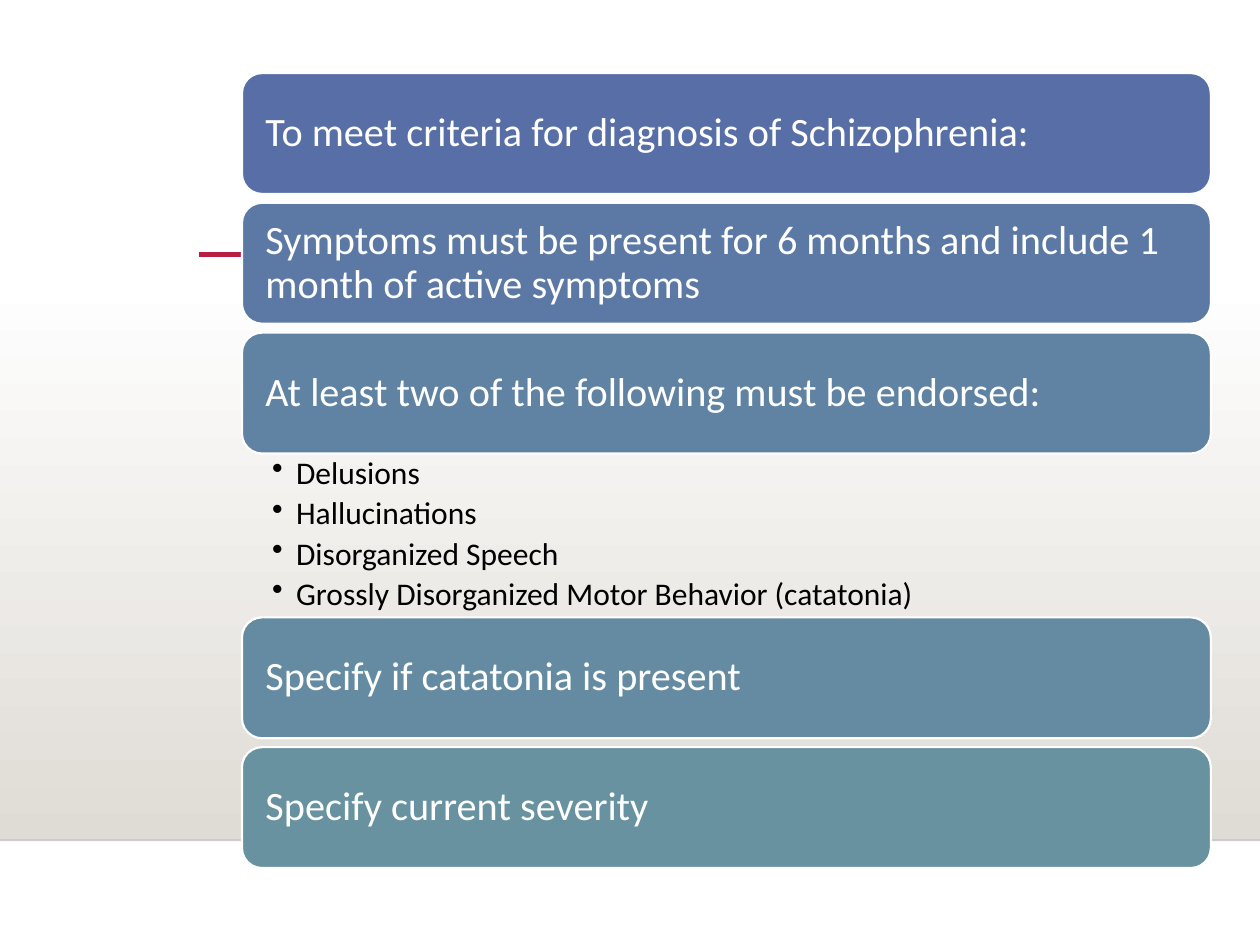
from lxml import etree
from pptx import Presentation
from pptx import util as u
from pptx.dml import color as col
from pptx.enum import shapes, text
from pptx.oxml import ns

HUES = {"white": "FFFFFF", "sand": "DFDBD5", "black": "000000", "red": "B71E42"}
FONT = "Calibri"
HIGH, GAP = 0.96, 0.07
HEADS = [
    ("To meet criteria for diagnosis of Schizophrenia:", "586EA6"),
    ("Symptoms must be present for 6 months and include 1 month of active symptoms", "5C79A5"),
    ("At least two of the following must be endorsed:", "6083A3"),
]
SIGNS = [
    "Delusions",
    "Hallucinations",
    "Disorganized Speech",
    "Grossly Disorganized Motor Behavior (catatonia)",
]
NOTES = [
    ("Specify if catatonia is present", "648BA2"),
    ("Specify current severity", "6892A0"),
]


def rgb(code):
    """Turn a hex string into a colour."""
    return col.RGBColor.from_string(code)


def inset(frame, left, top, right, low):
    """Set the four margins of a text frame and let it wrap."""
    frame.word_wrap = True
    frame.margin_left, frame.margin_top = u.Inches(left), u.Inches(top)
    frame.margin_right, frame.margin_bottom = u.Inches(right), u.Inches(low)


def style(para, size, hue):
    """Format a paragraph and its runs."""
    para.alignment = text.PP_ALIGN.LEFT
    para.line_spacing = 0.9
    for run in para.runs:
        run.font.name, run.font.size = FONT, u.Pt(size)
        run.font.color.rgb = rgb(hue)


def rule(slide, left, top, wide, hue, thick, alpha=None):
    """Draw a level line, see-through if alpha is given."""
    y = u.Inches(top)
    line = slide.shapes.add_connector(
        shapes.MSO_CONNECTOR.STRAIGHT, u.Inches(left), y, u.Inches(left + wide), y)
    line.line.color.rgb = rgb(hue)
    line.line.width = u.Pt(thick)
    props = line._element.spPr
    if alpha:
        tint = props.find(".//" + ns.qn("a:srgbClr"))
        etree.SubElement(tint, ns.qn("a:alpha")).set("val", str(alpha * 1000))
    etree.SubElement(props, ns.qn("a:effectLst"))


def floor(slide, left, top, wide, high):
    """Draw the fading backdrop with its edge and the accent line."""
    wall = slide.shapes.add_shape(
        shapes.MSO_SHAPE.RECTANGLE, *map(u.Inches, (left, top, wide, high)))
    wall.shadow.inherit = False
    wall.line.fill.background()
    wall.fill.gradient()
    wall.fill.gradient_angle = 270
    for stop, hue, spot in zip(wall.fill.gradient_stops, ("white", "sand"), (0, 1)):
        stop.color.rgb = rgb(HUES[hue])
        stop.position = spot
    rule(slide, left, top + high, wide, HUES["black"], 1, 20)
    rule(slide, 1.58, 2.02, 7.19, HUES["red"], 2.5)


def bar(slide, left, top, wide, words, hue):
    """Draw one rounded bar with its heading."""
    shape = slide.shapes.add_shape(
        shapes.MSO_SHAPE.ROUNDED_RECTANGLE, *map(u.Inches, (left, top, wide, HIGH)))
    shape.shadow.inherit = False
    shape.fill.solid()
    shape.fill.fore_color.rgb = rgb(hue)
    shape.line.color.rgb = rgb(HUES["white"])
    shape.line.width = u.Pt(1.25)
    frame = shape.text_frame
    inset(frame, 0.14, 0.1, 0.14, 0.1)
    frame.vertical_anchor = text.MSO_ANCHOR.MIDDLE
    frame.text = words
    style(frame.paragraphs[0], 23, HUES["white"])


def bullets(slide, left, top, wide, high, items):
    """Place the bulleted list."""
    box = slide.shapes.add_textbox(*map(u.Inches, (left, top, wide, high)))
    frame = box.text_frame
    inset(frame, 0.24, 0.03, 0.18, 0.03)
    frame.text = "\n".join(items)
    for para in frame.paragraphs:
        props = para._p.get_or_add_pPr()
        props.set("marL", str(u.Inches(0.19)))
        props.set("indent", str(-u.Inches(0.19)))
        etree.SubElement(props, ns.qn("a:buChar")).set("char", "•")
        style(para, 18, HUES["black"])
        para.space_after = u.Pt(3.6)


def stack(slide, left, top, wide, bars):
    """Pile bars downwards at equal gaps."""
    for i, (words, hue) in enumerate(bars):
        bar(slide, left, top + i * (HIGH + GAP), wide, words, hue)


def main():
    """Build and save the slide."""
    deck = Presentation()
    deck.slide_width, deck.slide_height = u.Inches(10), u.Inches(7.5)
    slide = deck.slides.add_slide(deck.slide_layouts[6])
    left, top, wide, high = 1.92, 0.58, 7.69, 1.3
    floor(slide, 0, 2.2, 10, 4.47)
    stack(slide, left, top, wide, HEADS)
    top += len(HEADS) * (HIGH + GAP) - GAP
    bullets(slide, left, top, wide, high, SIGNS)
    stack(slide, left, top + high, wide, NOTES)
    deck.save("out.pptx")


if __name__ == "__main__":
    main()
